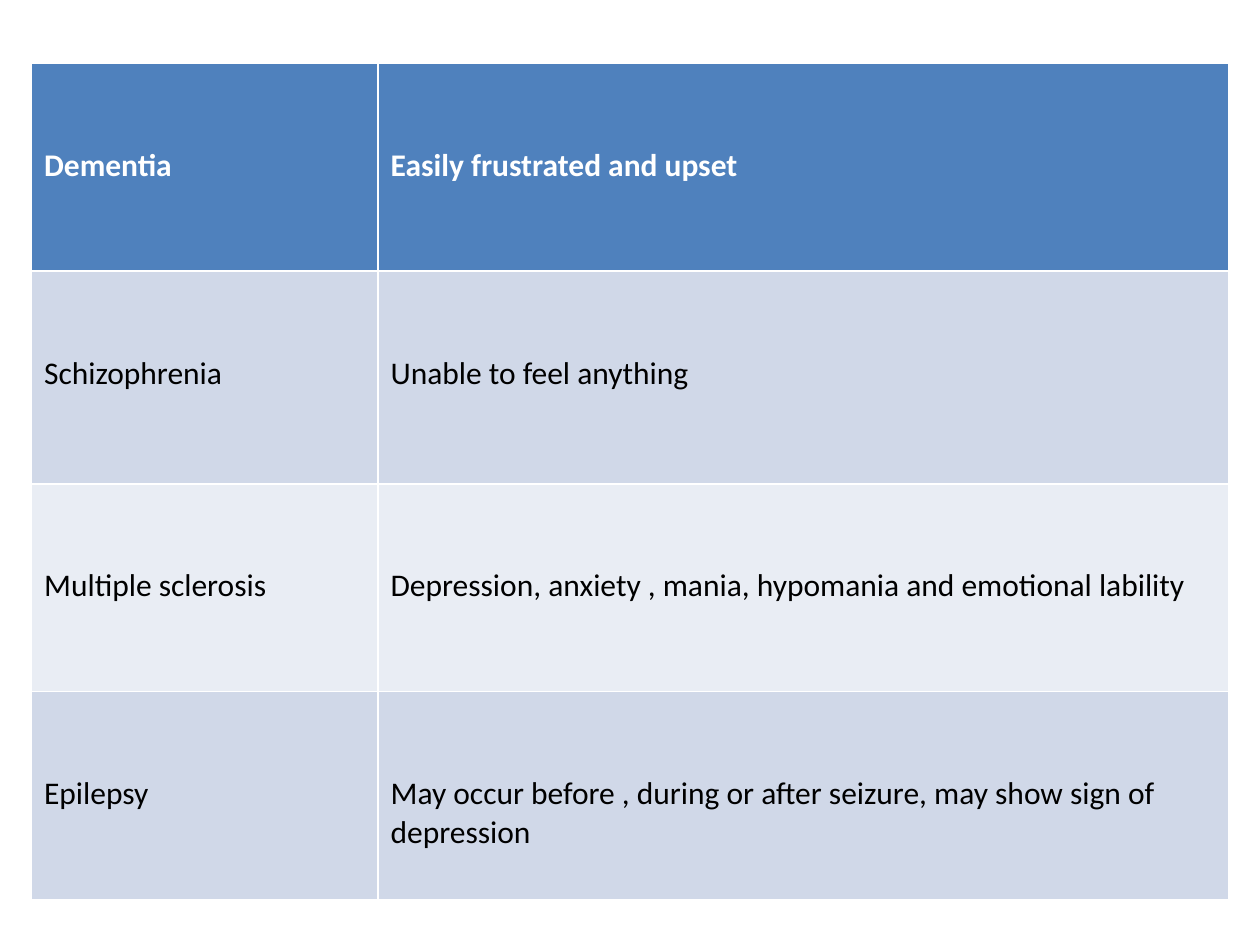
from typing import NamedTuple

from pptx import Presentation
from pptx.dml.color import RGBColor
from pptx.enum.text import MSO_ANCHOR
from pptx.util import Inches, Pt

TOP = MSO_ANCHOR.TOP
BLANK_LAYOUT = 6
COLORS = {
    "header": "4F81BD",
    "band_dark": "D0D8E8",
    "band_light": "E9EDF4",
    "header_text": "FFFFFF",
    "body_text": "000000",
}
COLUMN_WIDTHS = (2.75, 6.75)
TEXT_DROP = 0.66  # space above the text in every cell


class Condition(NamedTuple):
    name: str
    emotional_signs: str
    height: float = 1.65


CONDITIONS = (
    Condition("Dementia", "Easily frustrated and upset"),
    Condition("Schizophrenia", "Unable to feel anything", 1.69),
    Condition("Multiple sclerosis",
              "Depression, anxiety , mania, hypomania and emotional lability"),
    Condition("Epilepsy",
              "May occur before , during or after seizure, may show sign of depression"),
)


def rgb(name: str) -> RGBColor:
    return RGBColor.from_string(COLORS[name])


def fill_cell(cell, text: str, fill: str, is_header: bool) -> None:
    cell.fill.solid()
    cell.fill.fore_color.rgb = rgb(fill)
    cell.vertical_anchor = TOP
    cell.margin_top = Inches(TEXT_DROP)
    cell.text = text
    font = cell.text_frame.paragraphs[0].font
    font.name = "Calibri"
    font.size = Pt(18)
    font.bold = is_header
    font.color.rgb = rgb("header_text" if is_header else "body_text")


def add_conditions_table(slide) -> None:
    """The table's default style supplies the white borders."""
    table = slide.shapes.add_table(
        len(CONDITIONS), len(COLUMN_WIDTHS), Inches(0.25), Inches(0.5),
        Inches(sum(COLUMN_WIDTHS)), Inches(sum(c.height for c in CONDITIONS)),
    ).table
    for column, width in zip(table.columns, COLUMN_WIDTHS):
        column.width = Inches(width)
    for index, (row, condition) in enumerate(zip(table.rows, CONDITIONS)):
        row.height = Inches(condition.height)
        is_header = index == 0
        band = "band_dark" if index % 2 else "band_light"
        fill = "header" if is_header else band
        for cell, text in zip(row.cells, (condition.name, condition.emotional_signs)):
            fill_cell(cell, text, fill, is_header)


def main() -> None:
    presentation = Presentation()
    presentation.slide_width = Inches(10)
    presentation.slide_height = Inches(7.5)
    slide = presentation.slides.add_slide(presentation.slide_layouts[BLANK_LAYOUT])
    add_conditions_table(slide)
    presentation.save("out.pptx")


if __name__ == "__main__":
    main()
